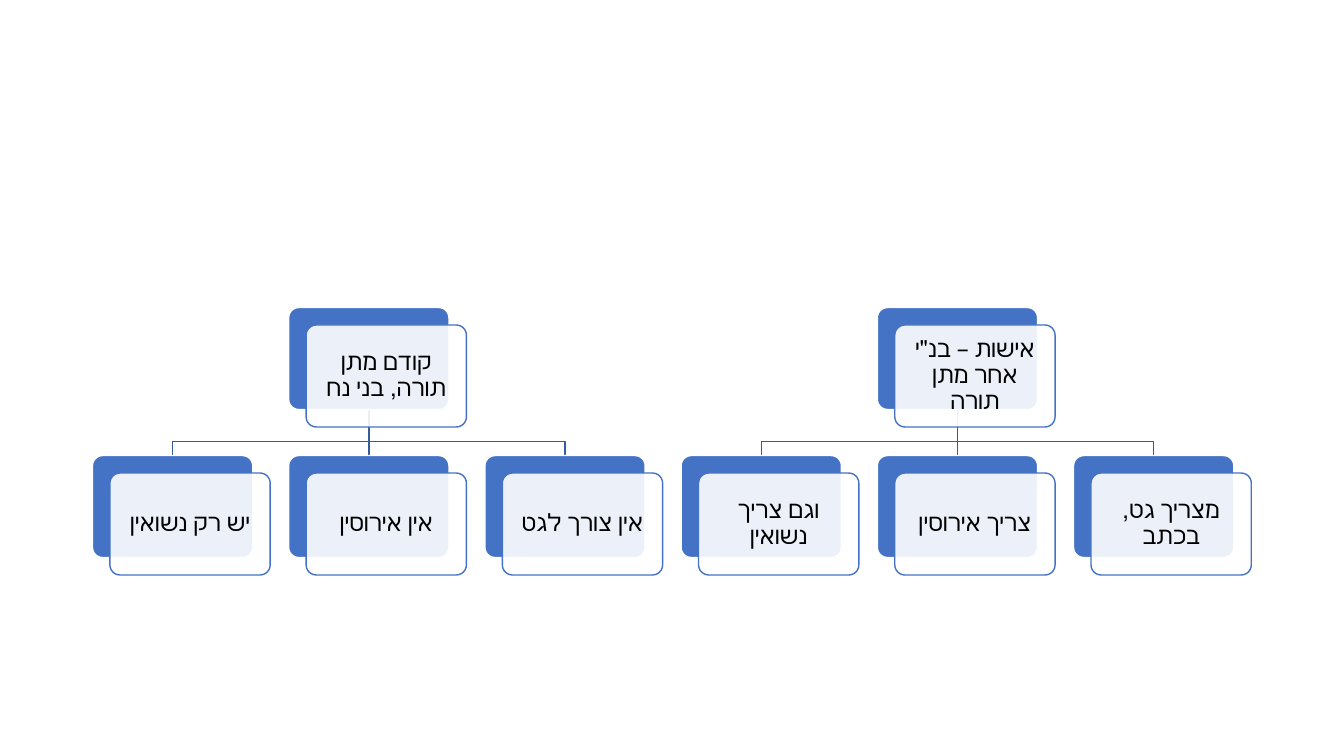
from lxml import etree
from pptx import Presentation
from pptx.dml.color import RGBColor
from pptx.enum.shapes import MSO_CONNECTOR, MSO_SHAPE
from pptx.enum.text import MSO_ANCHOR, PP_ALIGN
from pptx.oxml.ns import qn
from pptx.util import Cm, Pt

ROUNDED = MSO_SHAPE.ROUNDED_RECTANGLE
STRAIGHT = MSO_CONNECTOR.STRAIGHT
MIDDLE = MSO_ANCHOR.MIDDLE
CENTER = PP_ALIGN.CENTER

COLORS = {"blue": "4472C4", "branch": "365B9D", "white": "FFFFFF", "text": "000000"}

LEFT, PITCH = 2.33, 4.945
PARENT_TOP, CHILD_TOP = 7.75, 11.48
BOX_W, BOX_H = 4.04, 2.57
SHIFT = 0.44
BRANCH_Y = 11.13

# Each tree: parent label, then its children from left to right
TREES = [
    ("קודם מתן תורה, בני נח", ["יש רק נשואין", "אין אירוסין", "אין צורך לגט"]),
    ("אישות – בנ\"י אחר מתן תורה", ["וגם צריך נשואין", "צריך אירוסין", "מצריך גט, בכתב"]),
]


class TreeSlide:
    def __init__(self, slide, font="Calibri", size=17):
        self.shapes = slide.shapes
        self.font = font
        self.size = Pt(size)

    def color(self, name):
        return RGBColor.from_string(COLORS[name])

    def outline(self, sp, name):
        sp.line.color.rgb = self.color(name)
        sp.line.width = Pt(1)

    def branch(self, x1, x2):
        """Line from a parent's bottom centre to a child's top centre."""
        top = PARENT_TOP + BOX_H
        if x1 == x2:
            sp = self.shapes.add_connector(STRAIGHT, Cm(x1), Cm(top), Cm(x2), Cm(CHILD_TOP))
            etree.SubElement(sp._element.spPr, qn("a:effectLst"))
        else:
            builder = self.shapes.build_freeform(Cm(x1), Cm(top))
            corners = [(x1, BRANCH_Y), (x2, BRANCH_Y), (x2, CHILD_TOP)]
            builder.add_line_segments([(Cm(x), Cm(y)) for x, y in corners], close=False)
            sp = builder.convert_to_shape()
            sp.fill.background()
            sp.shadow.inherit = False
        self.outline(sp, "branch")

    def box(self, x, y, fill, line):
        sp = self.shapes.add_shape(ROUNDED, Cm(x), Cm(y), Cm(BOX_W), Cm(BOX_H))
        sp.adjustments[0] = 0.1
        sp.shadow.inherit = False
        sp.fill.solid()
        sp.fill.fore_color.rgb = self.color(fill)
        self.outline(sp, line)
        return sp

    def card(self, x, y, text):
        """Blue box with a translucent labelled box shifted over it."""
        self.box(x, y, "blue", "white")
        sp = self.box(x + SHIFT, y + SHIFT, "white", "blue")
        fill = sp._element.spPr.find(qn("a:solidFill"))
        etree.SubElement(fill[0], qn("a:alpha"), val="90000")
        tf = sp.text_frame
        tf.word_wrap = True
        tf.vertical_anchor = MIDDLE
        tf.margin_left = tf.margin_right = tf.margin_top = tf.margin_bottom = Cm(0.18)
        p = tf.paragraphs[0]
        p.text = text
        p.alignment = CENTER
        p.line_spacing = 0.9
        p.font.name = self.font
        p.font.size = self.size
        p.font.color.rgb = self.color("text")
        p._p.get_or_add_pPr().set("rtl", "1")


def main():
    prs = Presentation()
    prs.slide_width, prs.slide_height = Cm(33.87), Cm(19.05)
    tree_slide = TreeSlide(prs.slides.add_slide(prs.slide_layouts[6]))

    columns = [LEFT + PITCH * i for i in range(6)]
    groups = [columns[:3], columns[3:]]
    for xs in groups:
        for x in xs:
            tree_slide.branch(xs[1] + BOX_W / 2, x + BOX_W / 2)
    for xs, (parent, children) in zip(groups, TREES):
        tree_slide.card(xs[1], PARENT_TOP, parent)
        for x, child in zip(xs, children):
            tree_slide.card(x, CHILD_TOP, child)

    prs.save("out.pptx")


if __name__ == "__main__":
    main()
